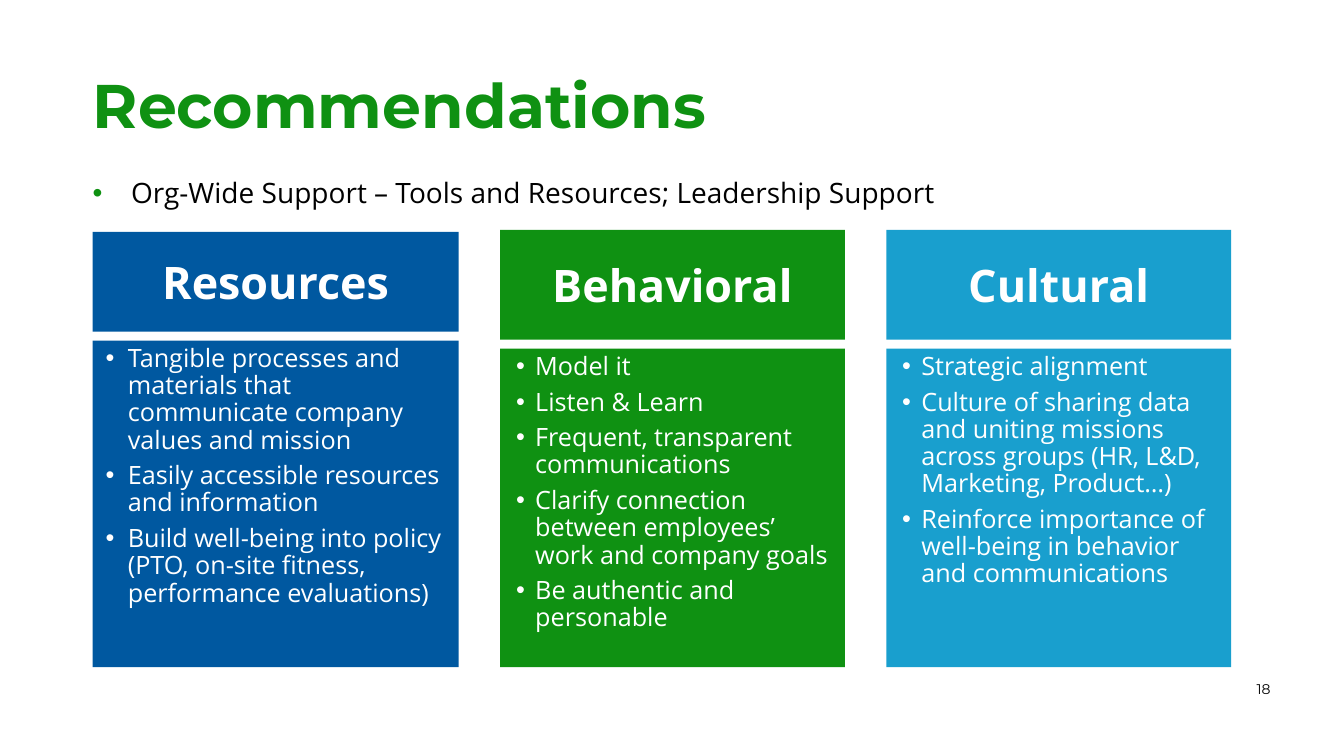
from lxml.etree import SubElement
from pptx import Presentation
from pptx.dml.color import RGBColor as Rgb
from pptx.enum.shapes import MSO_SHAPE as Shape
from pptx.enum.text import MSO_ANCHOR as Anchor, PP_ALIGN as Align
from pptx.oxml.ns import qn
from pptx.util import Pt

PX = 9144  # 100 px to the inch
THEME = {
    "blue": Rgb.from_string("0058A0"),
    "green": Rgb.from_string("0F9112"),
    "cyan": Rgb.from_string("199FCE"),
    "white": Rgb.from_string("FFFFFF"),
    "black": Rgb.from_string("000000"),
    "heading_font": "Montserrat",
    "body_font": "Open Sans",
    "title": Pt(44),
    "header": Pt(32),
    "lead": Pt(20),
    "item": Pt(18),
    "number": Pt(10),
}


def add_bullet(para, left, hang, color=None, tab=None):
    """Give para a hanging bullet; lengths are px."""
    props = para._p.get_or_add_pPr()
    props.set("marL", str(left * PX))
    props.set("indent", str(-hang * PX))
    if color is not None:
        fill = SubElement(props, qn("a:buClr"))
        SubElement(fill, qn("a:srgbClr"), val=str(color))
    SubElement(props, qn("a:buFont"), typeface="Arial")
    SubElement(props, qn("a:buChar"), char="•")
    if tab:
        tabs = SubElement(props, qn("a:tabLst"))
        SubElement(tabs, qn("a:tab"), pos=str(tab * PX), algn="l")


def write(box, lines, font, layout, insets=(10, 5, 10, 5), anchor=Anchor.TOP, bullet=None):
    """Fill box with one paragraph per line; font and layout are format values."""
    frame = box.text_frame
    frame.word_wrap = True
    frame.vertical_anchor = anchor
    for side, inset in zip(("left", "top", "right", "bottom"), insets):
        setattr(frame, f"margin_{side}", inset * PX)
    for index, line in enumerate(lines):
        para = frame.add_paragraph() if index else frame.paragraphs[0]
        if bullet:
            add_bullet(para, **bullet)
        for name, value in layout.items():
            setattr(para, name, value)
        span = para.add_run()
        span.text = line
        span.font.color.rgb = font["color"]
        for name in ("name", "size", "bold"):
            setattr(span.font, name, font.get(name))


deck = Presentation()
deck.slide_width, deck.slide_height = 1333 * PX, 750 * PX
slide = deck.slides.add_slide(deck.slide_layouts[6])

LEFT = 92
FLUSH = (0, 0, 0, 0)
list_layout = {"alignment": Align.LEFT, "line_spacing": 0.9, "space_after": Pt(6)}

title = slide.shapes.add_textbox(LEFT * PX, 75 * PX, 1150 * PX, 75 * PX)
title_font = {"name": THEME["heading_font"], "size": THEME["title"],
              "color": THEME["green"], "bold": True}
write(title, ["Recommendations"], title_font, {"line_spacing": 0.9}, FLUSH)

lead = slide.shapes.add_textbox(LEFT * PX, 178 * PX, 1150 * PX, 50 * PX)
lead_font = {"name": THEME["body_font"], "size": THEME["lead"], "color": THEME["black"]}
write(lead, ["Org-Wide Support – Tools and Resources; Leadership Support"], lead_font,
      list_layout, FLUSH, bullet={"left": 38, "hang": 38, "color": THEME["green"]})

number = slide.shapes.add_textbox(1214 * PX, 662 * PX, 56 * PX, 42 * PX)
number_font = {"name": THEME["heading_font"], "size": THEME["number"], "color": THEME["black"]}
write(number, ["18"], number_font, {"alignment": Align.RIGHT}, (0, 5, 10, 5), Anchor.MIDDLE)

# Header, colour, width, header top, header height, bullet, items
wide_bullet = {"left": 25, "hang": 22}
tab_bullet = {"left": 25, "hang": 19, "tab": 19}
columns = [
    ("Resources", "blue", 363, 230, 99, wide_bullet, [
        "Tangible processes and materials that communicate company values and mission",
        "Easily accessible resources and information",
        "Build well-being into policy (PTO, on-site fitness, performance evaluations)",
    ]),
    ("Behavioral", "green", 342, 228, 109, tab_bullet, [
        "Model it",
        "Listen & Learn",
        "Frequent, transparent communications",
        "Clarify connection between employees’ work and company goals",
        "Be authentic and personable",
    ]),
    ("Cultural", "cyan", 342, 228, 109, tab_bullet, [
        "Strategic alignment",
        "Culture of sharing data and uniting missions across groups (HR, L&D, Marketing, Product…)",
        "Reinforce importance of well-being in behavior and communications",
    ]),
]
COLUMN_GAP, ROW_GAP, BOTTOM = 41, 9, 662
header_font = {"name": THEME["body_font"], "size": THEME["header"],
               "color": THEME["white"], "bold": True}
item_font = {"name": THEME["body_font"], "size": THEME["item"], "color": THEME["white"]}

left = LEFT
for header, color, width, top, height, bullet, items in columns:
    group = slide.shapes.add_group_shape()
    body_top = top + height + ROW_GAP
    panels = []
    for panel_top, panel_height in ((body_top, BOTTOM - body_top), (top, height)):
        panel = group.shapes.add_shape(
            Shape.RECTANGLE, left * PX, panel_top * PX, width * PX, panel_height * PX)
        panel.shadow.inherit = False
        panel.fill.solid()
        panel.fill.fore_color.rgb = THEME[color]
        panel.line.fill.background()
        panels.append(panel)
    body_panel, header_panel = panels
    write(body_panel, items, item_font, list_layout, bullet=bullet)
    write(header_panel, [header], header_font, {"alignment": Align.CENTER}, anchor=Anchor.MIDDLE)
    left += width + COLUMN_GAP

deck.save("out.pptx")
